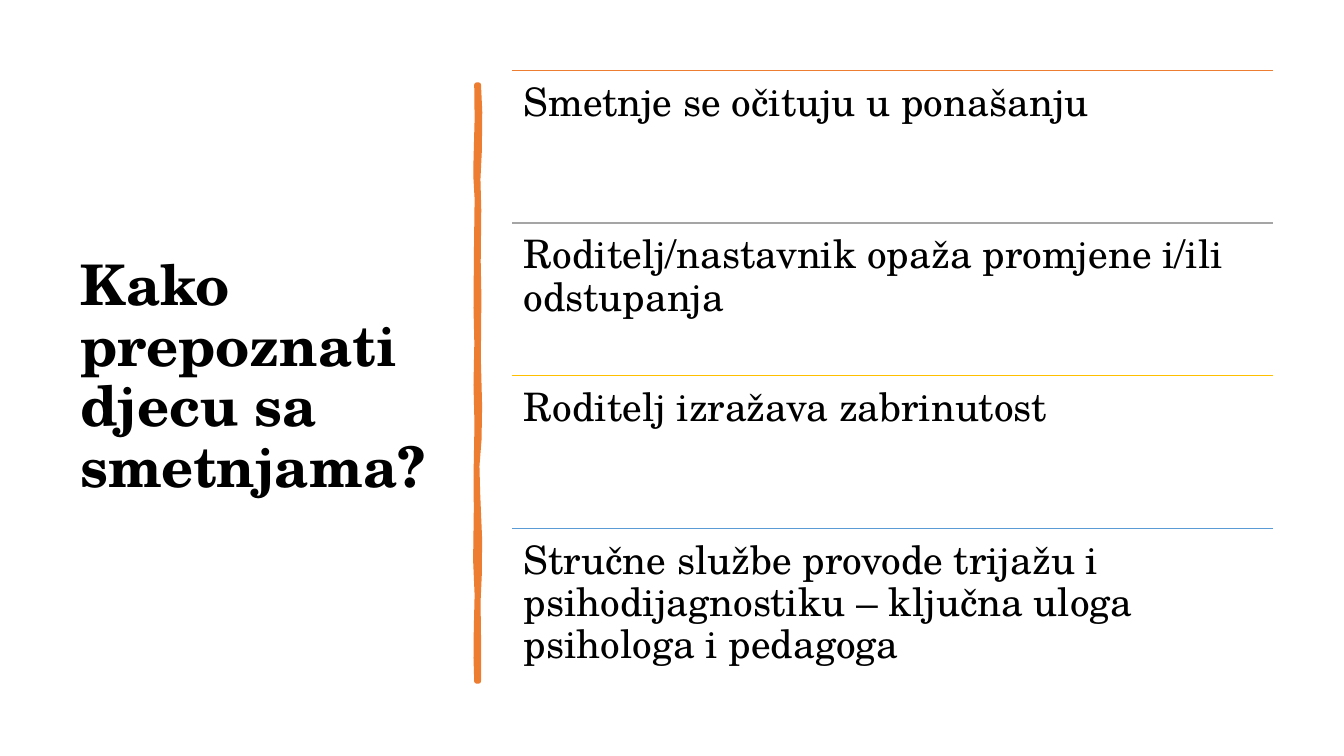
from dataclasses import dataclass

from lxml import etree
from pptx import Presentation
from pptx.dml.color import RGBColor
from pptx.enum.shapes import MSO_CONNECTOR
from pptx.enum.text import MSO_ANCHOR, MSO_AUTO_SIZE, PP_ALIGN
from pptx.oxml.ns import qn
from pptx.slide import Slide
from pptx.text.text import TextFrame
from pptx.util import Pt

STRAIGHT = MSO_CONNECTOR.STRAIGHT
MIDDLE, TOP = MSO_ANCHOR.MIDDLE, MSO_ANCHOR.TOP
LEFT = PP_ALIGN.LEFT
NO_AUTOFIT = MSO_AUTO_SIZE.NONE

FONT = "TeX Gyre Schola"
BLACK = RGBColor(0x00, 0x00, 0x00)
ORANGE = RGBColor(0xED, 0x7D, 0x31)
GRAY = RGBColor(0xA5, 0xA5, 0xA5)
GOLD = RGBColor(0xFF, 0xC0, 0x00)
BLUE = RGBColor(0x5B, 0x9B, 0xD5)

# Step grid, in points
STEPS_LEFT, STEPS_TOP = 365.8, 50.4
STEP_WIDTH, STEP_HEIGHT = 543.6, 109
STEP_INSET = 8.4

# Edges of the hand-drawn divider, in points: (x, y) from top to bottom
RIGHT_EDGE = [(342, 60.5), (342.9, 80), (342.6, 108), (341.6, 128), (342.2, 150),
              (341.8, 187), (342.3, 212), (341.9, 256), (342.8, 290), (342.4, 314),
              (340.9, 333), (341.4, 352), (342.8, 385), (342.6, 410), (341.7, 430),
              (342.1, 460), (342, 486.7)]
LEFT_EDGE = [(340.4, 60.5), (340.7, 85), (339.8, 118), (339.9, 128), (340.7, 142),
             (340.2, 180), (339.9, 220), (340.5, 245), (339.9, 275), (340.6, 303),
             (340, 335), (340.1, 365), (339.6, 400), (340.7, 425), (340.1, 450),
             (339.9, 470), (340.4, 486.7)]


@dataclass(frozen=True)
class Step:
    wording: str
    color: RGBColor


STEPS = [
    Step("Smetnje se očituju u ponašanju", ORANGE),
    Step("Roditelj/nastavnik opaža promjene i/ili odstupanja", GRAY),
    Step("Roditelj izražava zabrinutost", GOLD),
    Step("Stručne službe provode trijažu i psihodijagnostiku – ključna uloga "
         "psihologa i pedagoga", BLUE),
]


def write(frame: TextFrame, wording: str, size: float, bold: bool = False) -> None:
    frame.word_wrap = True
    frame.auto_size = NO_AUTOFIT
    paragraph = frame.paragraphs[0]
    paragraph.alignment = LEFT
    paragraph.line_spacing = 0.9
    run = paragraph.add_run()
    run.text = wording
    run.font.name = FONT
    run.font.size = Pt(size)
    run.font.bold = bold
    run.font.color.rgb = BLACK


def draw_divider(slide: Slide) -> None:
    outline = [(Pt(x), Pt(y)) for x, y in RIGHT_EDGE + LEFT_EDGE[::-1]]
    builder = slide.shapes.build_freeform(*outline[0])
    builder.add_line_segments(outline[1:], close=True)
    divider = builder.convert_to_shape()
    divider.shadow.inherit = False
    divider.fill.solid()
    divider.fill.fore_color.rgb = ORANGE
    divider.line.color.rgb = ORANGE
    divider.line.width = Pt(3.25)
    etree.SubElement(divider.line._get_or_add_ln(), qn("a:round"))


def draw_step(slide: Slide, step: Step, top: float) -> None:
    left, right = Pt(STEPS_LEFT), Pt(STEPS_LEFT + STEP_WIDTH)
    rule = slide.shapes.add_connector(STRAIGHT, left, Pt(top), right, Pt(top))
    rule.line.color.rgb = step.color
    rule.line.width = Pt(1)
    etree.SubElement(rule._element.spPr, qn("a:effectLst"))

    box = slide.shapes.add_textbox(left, Pt(top), Pt(STEP_WIDTH), Pt(STEP_HEIGHT))
    frame = box.text_frame
    frame.margin_left = frame.margin_right = Pt(STEP_INSET)
    frame.margin_top = frame.margin_bottom = Pt(STEP_INSET)
    frame.vertical_anchor = TOP
    write(frame, step.wording, 28)


def main() -> None:
    deck = Presentation()
    deck.slide_width, deck.slide_height = Pt(960), Pt(540)
    slide = deck.slides.add_slide(deck.slide_layouts[5])  # Title Only

    # Question on the left
    question = slide.shapes.title
    question.left, question.top = Pt(50), Pt(50.4)
    question.width, question.height = Pt(269), Pt(440)
    question.text_frame.vertical_anchor = MIDDLE
    write(question.text_frame, "Kako prepoznati djecu sa smetnjama?", 40, bold=True)

    draw_divider(slide)

    # Steps on the right
    for row, step in enumerate(STEPS):
        draw_step(slide, step, STEPS_TOP + row * STEP_HEIGHT)

    deck.save("out.pptx")


if __name__ == "__main__":
    main()
